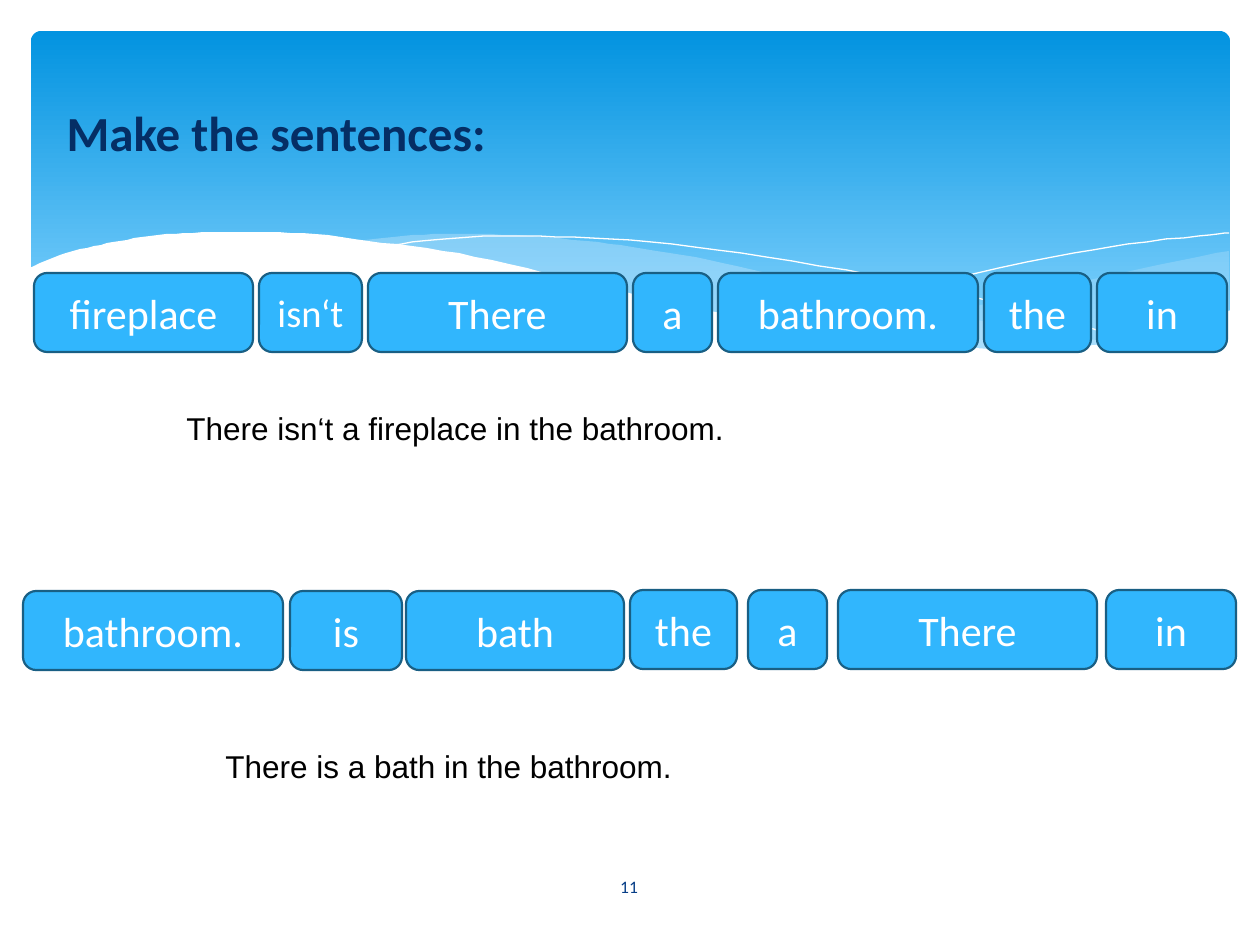
import lxml.etree
import pptx
import pptx.util
import pptx.dml.color
import pptx.enum.shapes
import pptx.enum.text
import pptx.oxml.ns

PX = 914400 / 126
COLORS = {
    "band_top": "0293E0", "band_bottom": "83D3FE", "mist": "C6E7FC", "white": "FFFFFF",
    "tile": "31B6FD", "edge": "195F84", "title": "052E65", "number": "073E87", "black": "000000",
}
ALIGN = pptx.enum.text.PP_ALIGN
ANCHOR = pptx.enum.text.MSO_ANCHOR
FIT = pptx.enum.text.MSO_AUTO_SIZE.SHAPE_TO_FIT_TEXT
ROUNDED = pptx.enum.shapes.MSO_SHAPE.ROUNDED_RECTANGLE

WIDTHS = {"fireplace": 219, "isn‘t": 103, "There": 259, "a": 79, "bathroom.": 260,
          "the": 107, "in": 130, "is": 112, "bath": 218}
FIRST_ROW = ["fireplace", "isn‘t", "There", "a", "bathroom.", "the", "in"]
SECOND_ROW = [("bathroom.", 23, 591), ("is", 290, 591), ("bath", 406, 591), ("the", 630, 590),
              ("a", 748, 590), ("There", 838, 590), ("in", 1106, 590)]

RIGHT_MIST = [
    [(1229, 251), (1158, 265), (1085, 281), (1014, 298), (949, 312), (889, 324), (833, 334)],
    [(833, 334), (888, 341), (938, 346), (984, 349), (1026, 350), (1063, 349), (1099, 347),
     (1130, 342), (1160, 334), (1187, 326), (1229, 311)],
]
MIDDLE_MIST = [
    [(360, 241), (430, 251), (509, 266), (566, 280), (668, 302), (757, 321), (838, 335),
     (910, 345), (973, 349), (1031, 350), (1080, 349), (1125, 344)],
    [(1125, 344), (1055, 334), (977, 320), (890, 302), (793, 280), (736, 266), (682, 255),
     (632, 247), (586, 241), (529, 236), (479, 234), (433, 234), (394, 237), (360, 241)],
]
LONG_CREST = [(389, 246), (422, 241), (471, 237), (524, 236), (591, 238), (672, 244),
              (766, 257), (876, 276), (1002, 304), (1143, 343)]
RIGHT_CREST = [(772, 324), (847, 304), (942, 281), (1053, 257), (1128, 244), (1199, 236),
               (1229, 233)]
FOREGROUND = [
    [(1231, 310), (1197, 323), (1159, 334), (1118, 342), (1071, 347), (1019, 349), (959, 347),
     (892, 340), (815, 330), (730, 315), (633, 294), (563, 277), (492, 260), (427, 248),
     (368, 241), (315, 234), (266, 232), (223, 232), (184, 233), (150, 236), (120, 241),
     (94, 246), (66, 253), (45, 261), (29, 268)],
    [(29, 415), (1231, 415)],
]


def px(n):
    """Turn pixels into EMU."""
    return pptx.util.Emu(round(n * PX))


def rgb(name):
    """Look up a named colour."""
    return pptx.dml.color.RGBColor.from_string(COLORS[name])


def smooth(points, steps=4):
    """Sample a Catmull-Rom curve through the points."""
    ends = [points[0], *points, points[-1]]
    curve = [points[0]]
    for a, b, c, d in zip(ends, ends[1:], ends[2:], ends[3:]):
        for i in range(1, steps + 1):
            t = i / steps
            curve.append(tuple(
                (2 * q + (r - p) * t + (2 * p - 5 * q + 4 * r - u) * t ** 2
                 + (3 * q - p - 3 * r + u) * t ** 3) / 2
                for p, q, r, u in zip(a, b, c, d)))
    return curve


def outline(s, points, close):
    """Draw a freeform through the points."""
    builder = s.shapes.build_freeform(*points[0], scale=PX)
    builder.add_line_segments(points[1:], close=close)
    sp = builder.convert_to_shape()
    sp.shadow.inherit = False
    return sp


def add_wave(s, curves, color, opacity=100):
    """Add a filled wave bounded by smooth curves."""
    sp = outline(s, [point for curve in curves for point in smooth(curve)], True)
    sp.fill.solid()
    sp.fill.fore_color.rgb = rgb(color)
    sp.line.fill.background()
    if opacity < 100:
        clr = sp._element.spPr.find(".//" + pptx.oxml.ns.qn("a:srgbClr"))
        alpha = lxml.etree.SubElement(clr, pptx.oxml.ns.qn("a:alpha"))
        alpha.set("val", str(opacity * 1000))


def add_crest(s, points):
    """Add a white hairline along a smooth curve."""
    sp = outline(s, smooth(points), False)
    sp.fill.background()
    sp.line.color.rgb = rgb("white")
    sp.line.width = pptx.util.Pt(0)


def add_band(s):
    """Add the rounded gradient band."""
    sp = s.shapes.add_shape(ROUNDED, px(31), px(31), px(1199), px(340))
    sp.adjustments[0] = 0.03
    sp.shadow.inherit = False
    sp.line.fill.background()
    sp.fill.gradient()
    sp.fill.gradient_angle = 270
    for stop, color, position in zip(sp.fill.gradient_stops, ("band_top", "band_bottom"), (0, 0.9)):
        stop.color.rgb = rgb(color)
        stop.position = position


def write(tf, text, size, color, font="Calibri", align=ALIGN.LEFT, bold=False):
    """Write one formatted paragraph."""
    p = tf.paragraphs[0]
    p.text = text
    p.alignment = align
    p.font.size = pptx.util.Pt(size)
    p.font.name = font
    p.font.bold = bold
    p.font.color.rgb = rgb(color)


def add_tile(s, word, left, top):
    """Add a word tile."""
    sp = s.shapes.add_shape(ROUNDED, px(left), px(top), px(WIDTHS[word]), px(79))
    sp.shadow.inherit = False
    sp.fill.solid()
    sp.fill.fore_color.rgb = rgb("tile")
    sp.line.color.rgb = rgb("edge")
    sp.line.width = pptx.util.Pt(1.25)
    sp.text_frame.vertical_anchor = ANCHOR.MIDDLE
    write(sp.text_frame, word, 22 if word == "isn‘t" else 24, "white", align=ALIGN.CENTER)


def add_text(s, box):
    """Add a wrapping text box and return its frame."""
    tf = s.shapes.add_textbox(*map(px, box)).text_frame
    tf.word_wrap = True
    return tf


def set_title(s, text):
    """Place and format the title above the band."""
    sp = s.shapes.title
    sp.left, sp.top, sp.width, sp.height = map(px, (54, 96, 456, 72))
    tf = sp.text_frame
    tf.word_wrap = False
    tf.auto_size = FIT
    tf.vertical_anchor = ANCHOR.TOP
    write(tf, text, 28, "title", bold=True)
    s.shapes._spTree.append(sp._element)


def main():
    """Build and save the slide."""
    prs = pptx.Presentation()
    prs.slide_width, prs.slide_height = px(1260), px(945)
    s = prs.slides.add_slide(prs.slide_layouts[5])
    add_band(s)
    add_wave(s, RIGHT_MIST, "mist", 29)
    add_wave(s, MIDDLE_MIST, "mist", 40)
    add_crest(s, LONG_CREST)
    add_crest(s, RIGHT_CREST)
    add_wave(s, FOREGROUND, "white")
    number = add_text(s, (549, 862, 160, 50))
    number.vertical_anchor = ANCHOR.MIDDLE
    write(number, "11", 10, "number", align=ALIGN.CENTER)
    left = 34
    for word in FIRST_ROW:
        add_tile(s, word, left, 273)
        left += WIDTHS[word] + 6
    for word, left, top in SECOND_ROW:
        add_tile(s, word, left, top)
    set_title(s, "Make the sentences:")
    for text, box in (("There isn‘t a fireplace in the bathroom.", (174, 403, 916, 50)),
                      ("There is a bath in the bathroom.", (213, 741, 893, 50))):
        tf = add_text(s, box)
        tf.auto_size = FIT
        write(tf, text, 18, "black", font="Arial")
    prs.save("out.pptx")


if __name__ == "__main__":
    main()
